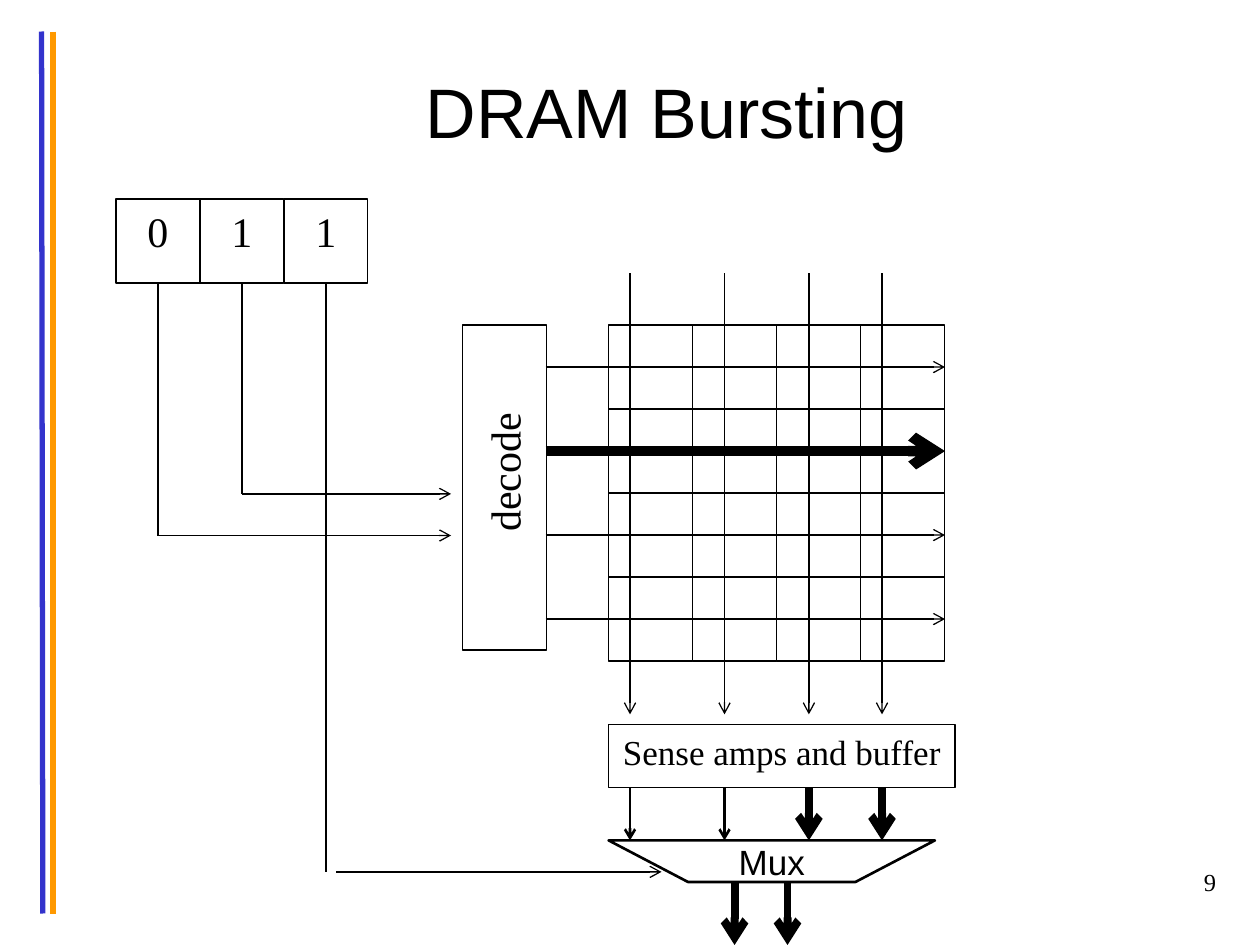
from lxml import etree
from pptx import Presentation
from pptx.dml.color import RGBColor
from pptx.enum.shapes import MSO_CONNECTOR, MSO_SHAPE
from pptx.enum.text import MSO_ANCHOR, PP_ALIGN
from pptx.oxml.ns import qn
from pptx.util import Inches, Pt

BLACK = "000000"
SERIF = "Times New Roman"
SANS = "Arial"
CELL = 2 / 3
GRID_LEFT, GRID_TOP = 4.83, 2.58
GRID_SIZE = 4
DECODER_RIGHT = 4.33
BIT_LEFT, BIT_TOP = 0.92, 1.58
BIT_BOTTOM = 2.25
COLUMN_LINES = [5, 5.75, 6.42, 7]


def color(hex_value):
    return RGBColor.from_string(hex_value)


def write(shape, text, size, font=SERIF, align=PP_ALIGN.CENTER,
          anchor=MSO_ANCHOR.TOP, wrap=True):
    frame = shape.text_frame
    frame.word_wrap = wrap
    frame.vertical_anchor = anchor
    para = frame.paragraphs[0]
    para.alignment = align
    span = para.add_run()
    span.text = text
    formats = {"size": Pt(size), "name": font, "bold": False}
    for name, value in formats.items():
        setattr(span.font, name, value)
    span.font.color.rgb = color(BLACK)


def outline(shape, width=0.75):
    """Leave the shape unfilled with a plain black outline."""
    shape.shadow.inherit = False
    shape.fill.background()
    shape.line.color.rgb = color(BLACK)
    shape.line.width = Pt(width)


def add_box(page, left, top, width, height):
    box = page.shapes.add_shape(MSO_SHAPE.RECTANGLE, Inches(left), Inches(top),
                                Inches(width), Inches(height))
    outline(box)
    return box


def add_label(page, left, top, width, height, text, size, **options):
    label = page.shapes.add_textbox(Inches(left), Inches(top),
                                    Inches(width), Inches(height))
    write(label, text, size, **options)
    return label


def add_line(page, start, end, width=0.75, hex_value=BLACK, arrow=False):
    points = [Inches(value) for value in (*start, *end)]
    line = page.shapes.add_connector(MSO_CONNECTOR.STRAIGHT, *points)
    line.line.color.rgb = color(hex_value)
    line.line.width = Pt(width)
    if arrow:
        etree.SubElement(line.line._get_or_add_ln(), qn("a:tailEnd"), type="arrow")
    etree.SubElement(line._element.spPr, qn("a:effectLst"))


def add_arrow(page, start, end, width=0.75):
    add_line(page, start, end, width, arrow=True)


def add_title(page):
    title = page.shapes.title
    place = {"left": 0.75, "top": 0.25, "width": 9.08, "height": 1.25}
    for name, value in place.items():
        setattr(title, name, Inches(value))
    write(title, "DRAM Bursting", 40, font=SANS, anchor=MSO_ANCHOR.MIDDLE)


def add_memory_array(page):
    for row in range(GRID_SIZE):
        for column in range(GRID_SIZE):
            add_box(page, GRID_LEFT + column * CELL, GRID_TOP + row * CELL, CELL, CELL)


def add_decoder(page):
    add_box(page, 3.67, GRID_TOP, CELL, 2.58)
    for row in range(GRID_SIZE):
        y = GRID_TOP + (row + 0.5) * CELL
        add_arrow(page, (DECODER_RIGHT, y), (7.5, y), width=6 if row == 1 else 0.75)
    label = add_label(page, 3.43, 3.49, 1.15, 0.51, "decode", 24,
                      align=PP_ALIGN.LEFT, wrap=False)
    label.rotation = 270


def add_address(page):
    """Address bits, each with a line down and an arrow to what it selects."""
    wires = [("0", 4.25, 1.25, 3.58), ("1", 3.92, 1.92, 3.58), ("1", 6.92, 2.67, 5.25)]
    for index, (bit, y, arrow_start, arrow_end) in enumerate(wires):
        left = BIT_LEFT + index * CELL
        write(add_box(page, left, BIT_TOP, CELL, CELL), bit, 24)
        middle = left + CELL / 2
        add_line(page, (middle, BIT_BOTTOM), (middle, y))
        add_arrow(page, (arrow_start, y), (arrow_end, y))


def add_mux(page):
    corners = [(4.83, 6.67), (5.46, 7), (6.79, 7), (7.42, 6.67)]
    points = [(Inches(x), Inches(y)) for x, y in corners]
    builder = page.shapes.build_freeform(*points[0])
    builder.add_line_segments(points[1:], close=True)
    mux = builder.convert_to_shape()
    outline(mux, 1.5)
    write(mux, "Mux", 20, font=SANS, anchor=MSO_ANCHOR.MIDDLE, wrap=False)


def add_output(page):
    sense_amps = add_box(page, GRID_LEFT, 5.75, 2.75, 0.5)
    write(sense_amps, "Sense amps and buffer", 20)
    add_mux(page)
    for x, width in zip(COLUMN_LINES, [1.5, 1.5, 4.5, 4.5]):
        add_arrow(page, (x, 2.17), (x, 5.67))
        add_arrow(page, (x, 6.25), (x, 6.67), width)
    for x in (5.83, 6.25):
        add_arrow(page, (x, 7), (x, 7.5), 4.5)


def main():
    deck = Presentation()
    deck.slide_width, deck.slide_height = Inches(10), Inches(7.5)
    page = deck.slides.add_slide(deck.slide_layouts[5])
    add_line(page, (0.33, 0.25), (0.34, 7.25), 3, "3333CC")
    add_line(page, (0.42, 0.25), (0.42, 7.25), 3, "FF9900")
    add_title(page)
    add_memory_array(page)
    add_decoder(page)
    add_address(page)
    add_output(page)
    add_label(page, 7.67, 6.83, 2.08, 0.5, "9", 14, align=PP_ALIGN.RIGHT)
    deck.save("out.pptx")


if __name__ == "__main__":
    main()
